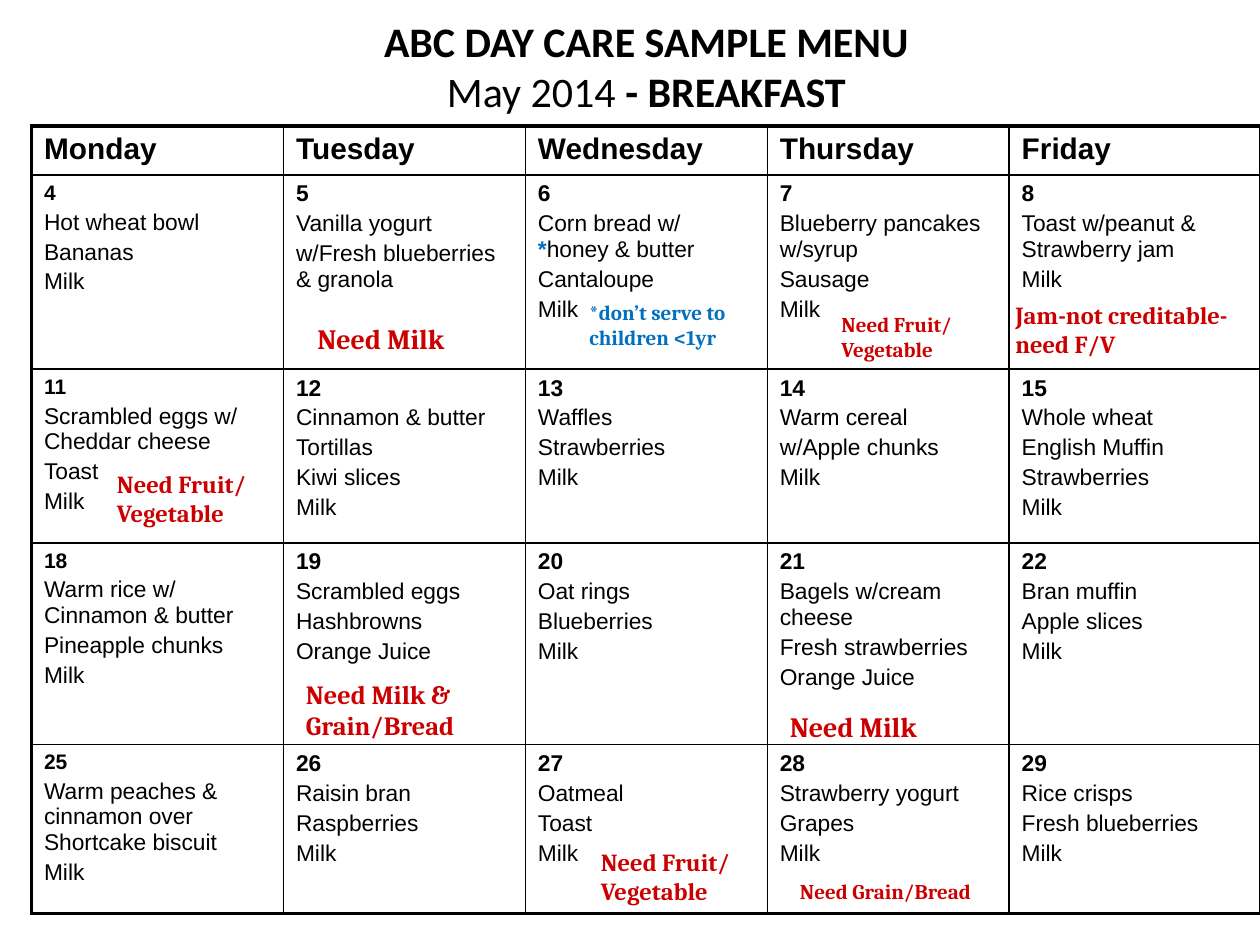
from dataclasses import dataclass
from itertools import accumulate

from lxml.etree import SubElement
from pptx import Presentation
from pptx.dml.color import RGBColor as RGB
from pptx.enum.text import MSO_ANCHOR as Anchor, MSO_AUTO_SIZE as Fit, PP_ALIGN as Align
from pptx.oxml.ns import qn
from pptx.util import Inches, Pt


@dataclass(frozen=True)
class Theme:
    ink: str = "000000"
    red: str = "CC0000"
    blue: str = "0070C0"
    head: str = "Calibri"
    body: str = "Arial"
    note: str = "Cambria"
    title: int = 24
    day: int = 17
    first: int = 12
    item: int = 13
    thick: float = 2.25
    thin: float = 1


T = Theme()
TITLE = (("ABC DAY CARE SAMPLE MENU", True), ("May 2014 ", False), ("- BREAKFAST", True))
DAYS = ("Monday", "Tuesday", "Wednesday", "Thursday", "Friday")
START = 4  # date of the first Monday
MENU = (
    (("Hot wheat bowl", "Bananas", "Milk"),
     ("Vanilla yogurt", "w/Fresh blueberries & granola"),
     ("Corn bread w/ *honey & butter", "Cantaloupe", "Milk"),
     ("Blueberry pancakes w/syrup", "Sausage", "Milk"),
     ("Toast w/peanut & Strawberry jam", "Milk")),
    (("Scrambled eggs w/ Cheddar cheese", "Toast", "Milk"),
     ("Cinnamon & butter", "Tortillas", "Kiwi slices", "Milk"),
     ("Waffles", "Strawberries", "Milk"),
     ("Warm cereal", "w/Apple chunks", "Milk"),
     ("Whole wheat", "English Muffin", "Strawberries", "Milk")),
    (("Warm rice w/ Cinnamon & butter", "Pineapple chunks", "Milk"),
     ("Scrambled eggs", "Hashbrowns", "Orange Juice"),
     ("Oat rings", "Blueberries", "Milk"),
     ("Bagels w/cream cheese", "Fresh strawberries", "Orange Juice"),
     ("Bran muffin", "Apple slices", "Milk")),
    (("Warm peaches & cinnamon over Shortcake biscuit", "Milk"),
     ("Raisin bran", "Raspberries", "Milk"),
     ("Oatmeal", "Toast", "Milk"),
     ("Strawberry yogurt", "Grapes", "Milk"),
     ("Rice crisps", "Fresh blueberries", "Milk")),
)
FRUIT = ("Need Fruit/", "Vegetable")
# row, column, offset in the cell, width, height, type size, lines, wrap
NOTES = (
    (1, 1, 0.17, 1.11, 1.24, 0.37, 16, ("Need Milk",), False),
    (2, 0, 0.58, 0.74, 1.38, 0.57, 14, FRUIT, False),
    (4, 3, 0.16, 1.01, 1.79, 0.30, 12, ("Need Grain/Bread",), False),
    (4, 2, 0.50, 0.76, 1.38, 0.57, 14, FRUIT, False),
    (3, 1, 0.08, 1.02, 1.58, 0.61, 15, ("Need Milk & Grain/Bread",), True),
    (1, 4, -0.05, 0.94, 2.04, 0.57, 14, ("Jam-not creditable-", "need F/V"), False),
    (1, 3, 0.49, 1.03, 1.21, 0.50, 12, FRUIT, False),
    (3, 3, 0.08, 1.27, 1.24, 0.37, 16, ("Need Milk",), False),
    (1, 2, 0.41, 0.94, 1.58, 0.50, 12, ("*don’t serve to children <1yr",), True),
)
LEFT, TOP = 0.25, 1
COLS = (2, 1.92, 1.92, 1.92, 2)
ROWS = (0.39, 1.54, 1.38, 1.6, 1.34)
XS = tuple(accumulate(COLS, initial=LEFT))
YS = tuple(accumulate(ROWS, initial=TOP))


def style(font, face, size, color, bold):
    font.name, font.size, font.bold = face, Pt(size), bold
    font.color.rgb = RGB.from_string(color)


def add_title(slide):
    box = slide.shapes.title
    box.left, box.top, box.width, box.height = map(Inches, (0.67, 0, 8.92, 1.04))
    frame = box.text_frame
    frame.vertical_anchor = Anchor.MIDDLE
    para = frame.paragraphs[0]
    para.alignment = Align.CENTER
    for i, (text, bold) in enumerate(TITLE):
        run = para.add_run()
        run.text = text
        style(run.font, T.head, T.title, T.ink, bold)
        if i == 0:
            para.add_line_break()


def border(cell, row, col):
    """Thick lines on the outer edge of the table, thin ones inside."""
    props = cell._tc.get_or_add_tcPr()
    outer = {"L": col == 0, "R": col == len(COLS) - 1,
             "T": row == 0, "B": row == len(ROWS) - 1}
    for side, edge in outer.items():
        width = Pt(T.thick if edge else T.thin)
        line = SubElement(props, qn(f"a:ln{side}"), w=str(width))
        fill = SubElement(line, qn("a:solidFill"))
        SubElement(fill, qn("a:srgbClr"), val=T.ink)


def fill_cell(cell, lines):
    """Write (text, size, bold) lines; a star in the text turns blue."""
    frame = cell.text_frame
    for i, (text, size, bold) in enumerate(lines):
        para = frame.add_paragraph() if i else frame.paragraphs[0]
        para.space_before = Pt(size * 0.2)
        style(para.font, T.body, size, T.ink, bold)
        for part in filter(None, text.partition("*")):
            run = para.add_run()
            run.text = part
            star = part == "*"
            style(run.font, T.body, size, T.blue if star else T.ink, star or bold)


def add_menu(slide):
    table = slide.shapes.add_table(
        len(ROWS), len(COLS), Inches(LEFT), Inches(TOP),
        Inches(sum(COLS)), Inches(sum(ROWS))).table
    table.first_row = table.horz_banding = False
    for part, width in zip(table.columns, COLS):
        part.width = Inches(width)
    for part, height in zip(table.rows, ROWS):
        part.height = Inches(height)
    for r in range(len(ROWS)):
        for c, day in enumerate(DAYS):
            cell = table.cell(r, c)
            border(cell, r, c)
            cell.fill.background()
            if r == 0:
                lines = [(day, T.day, True)]
            else:
                date = str(START + 7 * (r - 1) + c)
                lines = [(date, T.item if c else T.first, True)]
                lines += [(food, T.item, False) for food in MENU[r - 1][c]]
            fill_cell(cell, lines)


def add_note(slide, row, col, dx, dy, width, height, size, lines, wrap):
    box = slide.shapes.add_textbox(
        *map(Inches, (XS[col] + dx, YS[row] + dy, width, height)))
    frame = box.text_frame
    frame.word_wrap = wrap
    frame.auto_size = Fit.SHAPE_TO_FIT_TEXT
    star = lines[0].startswith("*")
    for i, text in enumerate(lines):
        para = frame.add_paragraph() if i else frame.paragraphs[0]
        para.text = text
        style(para.font, T.note, size, T.blue if star else T.red, True)
        if star:
            para.space_before = Pt(size * 0.5)


def main():
    deck = Presentation()
    deck.slide_width, deck.slide_height = Inches(10), Inches(7.5)
    slide = deck.slides.add_slide(deck.slide_layouts[5])
    add_title(slide)
    add_menu(slide)
    for note in NOTES:
        add_note(slide, *note)
    deck.save("out.pptx")


if __name__ == "__main__":
    main()
